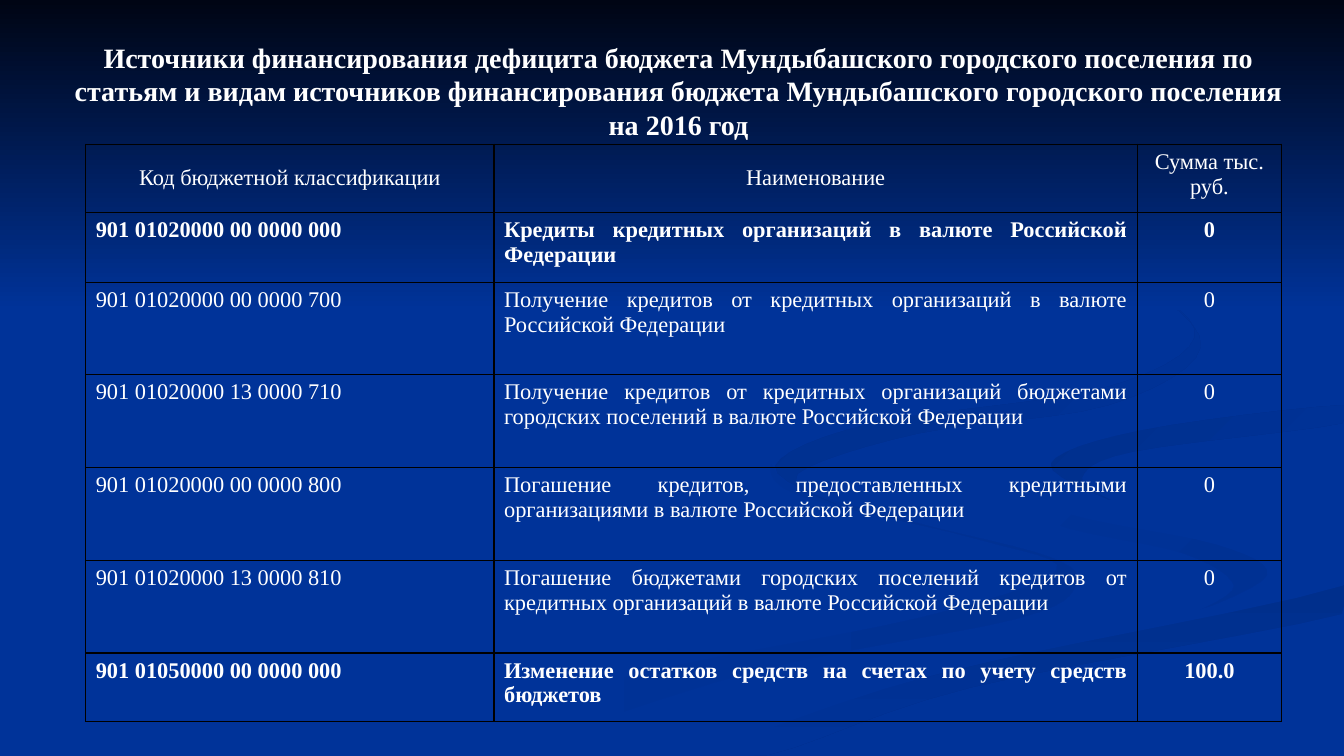
from pptx import Presentation
from pptx.dml.color import RGBColor
from pptx.enum.shapes import MSO_SHAPE
from pptx.enum.text import MSO_ANCHOR, PP_ALIGN
from pptx.oxml import parse_xml
from pptx.oxml.ns import nsdecls
from pptx.util import Inches, Pt

THEME = {
    "font": "Times New Roman", "title": 20, "body": 16,
    "text": "FFFFFF", "border": "000000", "bg": "003399", "top": "000514",
    "dim": "003193", "shade": "002F8C",
}
WIDTH, HEIGHT = 13.33, 7.5

TITLE = ("Источники финансирования дефицита бюджета Мундыбашского городского поселения по "
         "статьям и видам источников финансирования бюджета Мундыбашского городского поселения "
         "на 2016 год")
HEADER = ("Код бюджетной классификации", "Наименование", "Сумма тыс. руб.")
SOURCES = [
    ("901 01020000 00 0000 000", "Кредиты кредитных организаций в валюте Российской Федерации", "0"),
    ("901 01020000 00 0000 700",
     "Получение кредитов от кредитных организаций в валюте Российской Федерации", "0"),
    ("901 01020000 13 0000 710",
     "Получение кредитов от кредитных организаций бюджетами городских поселений "
     "в валюте Российской Федерации", "0"),
    ("901 01020000 00 0000 800",
     "Погашение кредитов, предоставленных кредитными организациями в валюте Российской Федерации", "0"),
    ("901 01020000 13 0000 810",
     "Погашение бюджетами городских поселений кредитов от кредитных организаций "
     "в валюте Российской Федерации", "0"),
    ("901 01050000 00 0000 000", "Изменение остатков средств на счетах по учету средств бюджетов", "100.0"),
]
BOLD_ROWS = {1, 6}
COL_WIDTHS = (4.05, 6.38, 1.43)
ROW_HEIGHTS = (0.68, 0.69, 0.92, 0.92, 0.92, 0.92, 0.68)
COL_ALIGN = (PP_ALIGN.LEFT, PP_ALIGN.JUSTIFY, PP_ALIGN.CENTER)

RIBBONS = [
    ("bg", "dim", 0, [
        (10.42, 5.53), (9.1, 5.19), (7.92, 4.85), (7.65, 4.6), (7.91, 4.91), (9.7, 5.35),
        (10.48, 5.66), (9.12, 6.13), (6.11, 6.74), (4, 7.49), (4.82, 7.49), (7.52, 6.65),
        (10.08, 6.14), (10.67, 5.81)]),
    ("bg", "dim", 45, [
        (12.57, 5.7), (12.06, 5.4), (10.56, 5.09), (9.65, 4.64), (10.41, 5.18),
        (11.74, 5.49), (12.24, 5.81), (11.91, 6.05)]),
    ("shade", "bg", 90, [
        (6.71, 7.49), (7.62, 7.49), (9.63, 6.82), (13.31, 6.09), (13.31, 5.81),
        (10.62, 6.38), (8.4, 6.93)]),
    ("bg", "bg", 0, [
        (9.66, 4.64), (10.57, 5.09), (12.06, 5.4), (12.57, 5.7), (11.89, 6.05), (9.39, 6.55),
        (6.36, 7.49), (6.93, 7.47), (9.28, 6.69), (13.32, 5.81), (13.32, 5.38), (11.55, 5.09),
        (10.42, 4.63), (11.34, 4.27), (13.32, 4.02), (13.32, 3.87), (10.77, 4.17)]),
    ("shade", "bg", 45, [
        (10.42, 4.6), (11.01, 4.96), (10.73, 4.74), (11.24, 4.48), (13.31, 4.2),
        (13.31, 4.02), (11.32, 4.27)]),
    ("shade", "bg", 45, [
        (9.11, 4.3), (10.99, 4.02), (11.91, 3.44), (11.23, 2.75), (10.17, 2.33),
        (11.27, 2.79), (11.85, 3.35), (10.91, 3.86), (8.65, 4.2), (7.69, 4.62),
        (8.29, 5), (7.91, 4.7)]),
]
CURVE_STEPS = 6


def rgb(name):
    return RGBColor.from_string(THEME[name])


def blend(a, b, c, d, t):
    return b + t * (c - a + t * (2 * a - 5 * b + 4 * c - d + t * (3 * (b - c) + d - a))) / 2


def smooth_outline(points):
    n = len(points)
    outline = []
    for i in range(n):
        xs, ys = zip(*(points[(i + k) % n] for k in (-1, 0, 1, 2)))
        for step in range(CURVE_STEPS):
            t = step / CURVE_STEPS
            outline.append((Inches(min(blend(*xs, t), WIDTH)), Inches(min(blend(*ys, t), HEIGHT))))
    return outline


def paint(sp, start, end, angle):
    sp.shadow.inherit = False
    sp.line.fill.background()
    if start == end:
        sp.fill.solid()
        sp.fill.fore_color.rgb = rgb(start)
        return
    sp.fill.gradient()
    sp.fill.gradient_angle = (360 - angle) % 360
    for stop, color, pos in zip(sp.fill.gradient_stops, (start, end), (0, 1)):
        stop.color.rgb = rgb(color)
        stop.position = pos


def write(tf, text, size, align, bold):
    tf.text = text
    p = tf.paragraphs[0]
    p.alignment = align
    font = p.runs[0].font
    font.name, font.size, font.bold = THEME["font"], Pt(THEME[size]), bold
    font.color.rgb = rgb("text")


def add_borders(cell):
    tc_pr = cell._tc.get_or_add_tcPr()
    for i, side in enumerate(("lnL", "lnR", "lnT", "lnB")):
        tc_pr.insert(i, parse_xml(
            f'<a:{side} {nsdecls("a")} w="{Pt(1)}"><a:solidFill>'
            f'<a:srgbClr val="{THEME["border"]}"/></a:solidFill></a:{side}>'))


def add_background(s):
    s.background.fill.solid()
    s.background.fill.fore_color.rgb = rgb("bg")
    for start, end, angle, points in RIBBONS:
        first, *rest = smooth_outline(points)
        builder = s.shapes.build_freeform(*first)
        builder.add_line_segments(rest, close=True)
        paint(builder.convert_to_shape(), start, end, angle)
    band = s.shapes.add_shape(MSO_SHAPE.RECTANGLE, 0, 0, Inches(WIDTH), Inches(3.08))
    paint(band, "top", "bg", 90)


def add_title(s):
    tf = s.shapes.add_textbox(Inches(0.61), Inches(0.35), Inches(12.24), Inches(1.1)).text_frame
    tf.word_wrap = True
    tf.vertical_anchor = MSO_ANCHOR.MIDDLE
    write(tf, TITLE, "title", PP_ALIGN.CENTER, True)


def add_sources_table(s):
    rows = [HEADER, *SOURCES]
    table = s.shapes.add_table(len(rows), len(HEADER), Inches(0.85), Inches(1.43),
                               Inches(sum(COL_WIDTHS)), Inches(sum(ROW_HEIGHTS))).table
    table.first_row = table.horz_banding = False
    for col, width in zip(table.columns, COL_WIDTHS):
        col.width = Inches(width)
    for r, (row, height) in enumerate(zip(rows, ROW_HEIGHTS)):
        table.rows[r].height = Inches(height)
        for c, text in enumerate(row):
            cell = table.cell(r, c)
            cell.fill.background()
            add_borders(cell)
            if r == 0 and c < 2:
                cell.vertical_anchor = MSO_ANCHOR.MIDDLE
            align = COL_ALIGN[c] if r else PP_ALIGN.CENTER
            write(cell.text_frame, text, "body", align, r in BOLD_ROWS)


def main():
    prs = Presentation()
    prs.slide_width, prs.slide_height = Inches(WIDTH), Inches(HEIGHT)
    s = prs.slides.add_slide(prs.slide_layouts[6])
    add_background(s)
    add_title(s)
    add_sources_table(s)
    prs.save("out.pptx")


if __name__ == "__main__":
    main()
